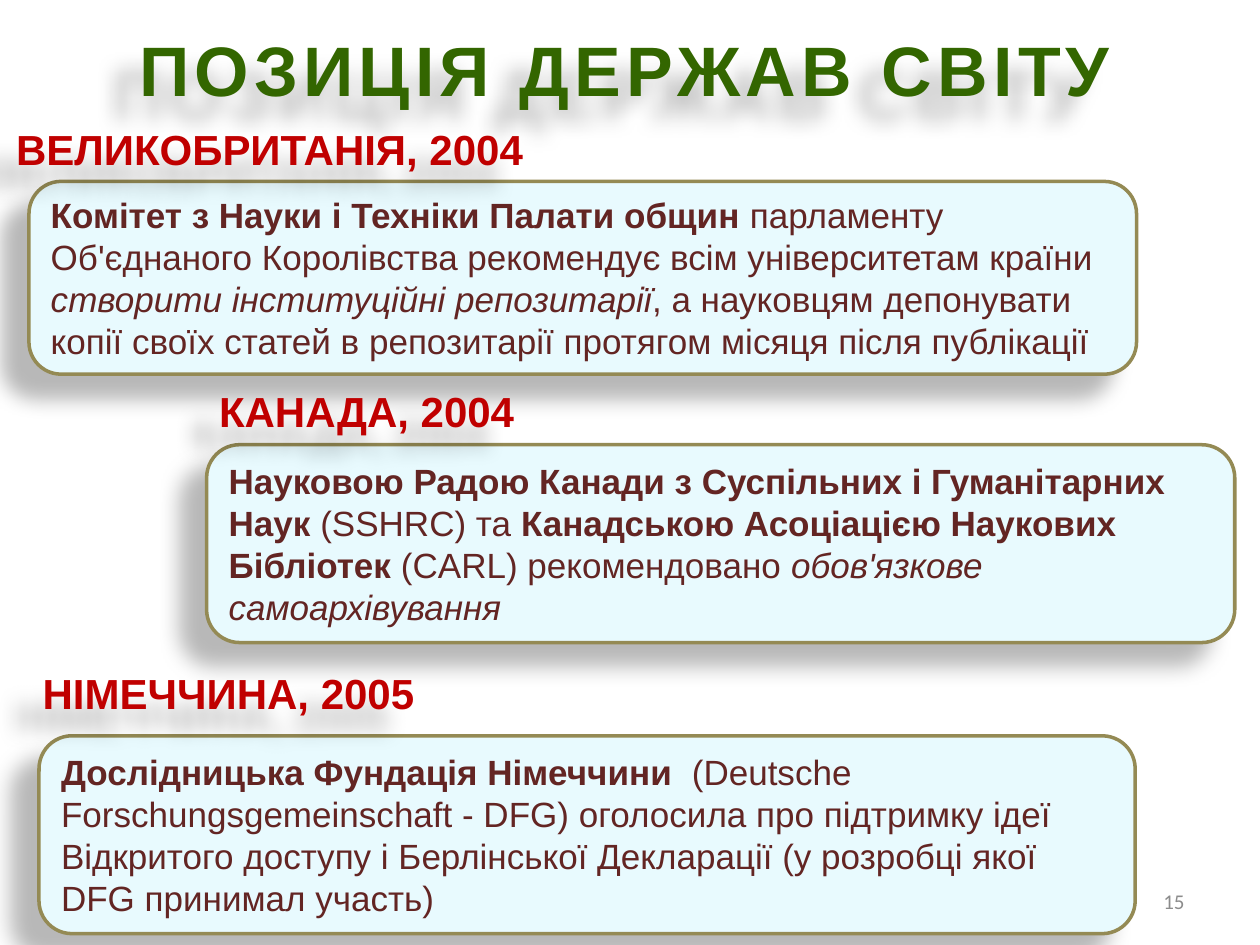
from dataclasses import dataclass

from lxml.etree import SubElement
from pptx import Presentation
from pptx.dml.color import RGBColor
from pptx.enum.shapes import MSO_SHAPE as Shape
from pptx.enum.text import MSO_ANCHOR as Anchor, MSO_AUTO_SIZE as AutoSize, PP_ALIGN as Align
from pptx.oxml.ns import qn
from pptx.util import Inches, Pt

GREEN = RGBColor(0x33, 0x66, 0x00)
RED = RGBColor(0xC0, 0x00, 0x00)
BROWN = RGBColor(0x63, 0x25, 0x23)
PALE_BLUE = RGBColor(0xE8, 0xFA, 0xFE)
OLIVE = RGBColor(0x94, 0x8A, 0x54)
GREY = RGBColor(0x8C, 0x8C, 0x8C)
BLACK = RGBColor(0, 0, 0)

Box = tuple[float, float, float, float]


@dataclass
class Span:
    text: str
    bold: bool = False
    italic: bool = False


@dataclass
class Country:
    heading: str
    heading_box: Box
    card_box: Box
    spans: list[Span]


COUNTRIES = [
    Country("ВЕЛИКОБРИТАНІЯ, 2004", (0.03, 0.93, 4.27, 0.5), (0.23, 1.44, 8.79, 1.53), [
        Span("Комітет з Науки і Техніки Палати общин", bold=True),
        Span(" парламенту Об'єднаного Королівства рекомендує всім університетам країни "),
        Span("створити інституційні репозитарії", italic=True),
        Span(", а науковцям депонувати копії своїх статей в репозитарії "
             "протягом місяця після публікації"),
    ]),
    Country("КАНАДА, 2004", (1.64, 3.01, 2.57, 0.5), (1.64, 3.53, 8.16, 1.57), [
        Span("Науковою Радою Канади з Суспільних і Гуманітарних Наук ", bold=True),
        Span("(SSHRC) та "),
        Span("Канадською Асоціацією Наукових Бібліотек ", bold=True),
        Span("(CARL) рекомендовано "),
        Span("обов'язкове самоархівування", italic=True),
    ]),
    Country("НІМЕЧЧИНА, 2005", (0.24, 5.25, 3.18, 0.5), (0.31, 5.84, 8.7, 1.57), [
        Span("Дослідницька Фундація Німеччини  ", bold=True),
        Span("(Deutsche Forschungsgemeinschaft - DFG) оголосила про підтримку ідеї "
             "Відкритого доступу і Берлінської Декларації "
             "(у розробці якої DFG принимал участь)"),
    ]),
]


def place(sp, box: Box) -> None:
    sp.left, sp.top, sp.width, sp.height = map(Inches, box)


def style(font, size: float, color: RGBColor, bold: bool = False, name: str = "Arial") -> None:
    font.name, font.size, font.bold = name, Pt(size), bold
    font.color.rgb = color


def add_shadow(sp) -> None:
    effects = SubElement(sp.element.spPr, qn("a:effectLst"))
    shadow = SubElement(effects, qn("a:outerShdw"), blurRad=str(Pt(11.8)),
                        dist=str(Pt(19.7)), dir=str(141 * 60000),
                        algn="tr", rotWithShape="0")
    color = SubElement(shadow, qn("a:srgbClr"), val=str(BLACK))
    SubElement(color, qn("a:alpha"), val="28000")


def add_title(s, text: str) -> None:
    sp = s.shapes.title
    place(sp, (0.31, 0.16, 9.3, 0.77))
    sp.fill.background()
    add_shadow(sp)
    tf = sp.text_frame
    tf.text = text
    tf.word_wrap = True
    tf.auto_size = AutoSize.NONE
    p = tf.paragraphs[0]
    p.alignment = Align.CENTER
    r = p.runs[0]
    style(r.font, 40, GREEN, bold=True)
    r.font._element.set("spc", "300")


def add_card(s, box: Box, spans: list[Span]) -> None:
    sp = s.shapes.add_shape(Shape.ROUNDED_RECTANGLE, *map(Inches, box))
    sp.fill.solid()
    sp.fill.fore_color.rgb = PALE_BLUE
    sp.line.color.rgb = OLIVE
    sp.line.width = Pt(2)
    add_shadow(sp)
    tf = sp.text_frame
    tf.word_wrap = True
    tf.vertical_anchor = Anchor.MIDDLE
    p = tf.paragraphs[0]
    p.alignment = Align.LEFT
    for span in spans:
        r = p.add_run()
        r.text = span.text
        style(r.font, 20, BROWN, bold=span.bold)
        r.font.italic = span.italic


def add_heading(s, box: Box, text: str) -> None:
    sp = s.shapes.add_textbox(*map(Inches, box))
    add_shadow(sp)
    tf = sp.text_frame
    tf.text = text
    tf.word_wrap = False
    tf.auto_size = AutoSize.SHAPE_TO_FIT_TEXT
    style(tf.paragraphs[0].runs[0].font, 24, RED, bold=True)


def add_page_number(s, text: str) -> None:
    sp = s.shapes.add_textbox(*map(Inches, (7.17, 6.95, 2.33, 0.4)))
    tf = sp.text_frame
    tf.text = text
    tf.word_wrap = True
    tf.vertical_anchor = Anchor.MIDDLE
    p = tf.paragraphs[0]
    p.alignment = Align.RIGHT
    style(p.runs[0].font, 12, GREY, name="Calibri")


def main() -> None:
    prs = Presentation()
    prs.slide_width, prs.slide_height = Inches(10), Inches(7.5)
    s = prs.slides.add_slide(prs.slide_layouts[5])
    add_title(s, "ПОЗИЦІЯ ДЕРЖАВ СВІТУ")
    for country in COUNTRIES:
        add_card(s, country.card_box, country.spans)
    for country in COUNTRIES:
        add_heading(s, country.heading_box, country.heading)
    add_page_number(s, "15")
    prs.save("out.pptx")


if __name__ == "__main__":
    main()
